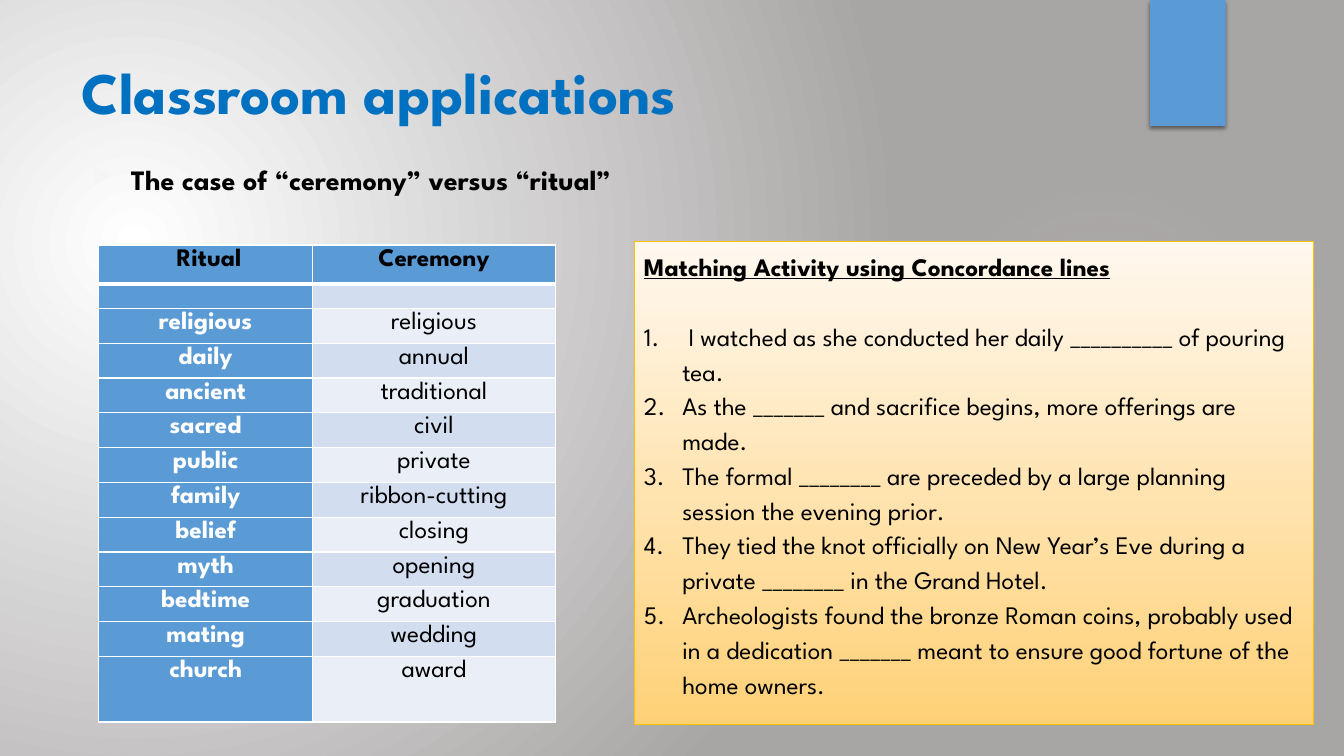
from lxml.etree import SubElement
from pptx import Presentation
from pptx.dml.color import RGBColor
from pptx.enum.shapes import MSO_SHAPE as Shape
from pptx.enum.text import MSO_ANCHOR as Anchor, PP_ALIGN as Align
from pptx.oxml import parse_xml
from pptx.oxml.ns import nsdecls, qn
from pptx.util import Inches, Pt

FONT = "League Spartan"
BLUE, TITLE_BLUE, BLACK, WHITE = "5B9BD5", "0070C0", "000000", "FFFFFF"
PALE, PALER = "D2DEEF", "EAEFF7"
COLUMNS, ROWS = 80, 45

COLLOCATES = [
    ("religious", "religious"), ("daily", "annual"), ("ancient", "traditional"),
    ("sacred", "civil"), ("public", "private"), ("family", "ribbon-cutting"),
    ("belief", "closing"), ("myth", "opening"), ("bedtime", "graduation"),
    ("mating", "wedding"), ("church", "award"),
]
SENTENCES = [
    " I watched as she conducted her daily __________ of pouring tea.",
    "As the _______ and sacrifice begins, more offerings are made.",
    "The formal ________ are preceded by a large planning session the evening prior.",
    "They tied the knot officially on New Year’s Eve during a private ________ in the Grand Hotel.",
    "Archeologists found the bronze Roman coins, probably used in a dedication _______ "
    "meant to ensure good fortune of the home owners.",
]


def color(hex_code):
    return RGBColor.from_string(hex_code)


def apply_gradient(properties, stops, direction):
    """Replace the solid fill in properties; stops are (position, colour, opacity) in percent."""
    stop_xml = "".join(
        f'<a:gs pos="{position * 1000}"><a:srgbClr val="{hex_code}">'
        f'<a:alpha val="{opacity * 1000}"/></a:srgbClr></a:gs>'
        for position, hex_code, opacity in stops)
    solid = properties.find(qn("a:solidFill"))
    properties.replace(solid, parse_xml(
        f'<a:gradFill {nsdecls("a")} rotWithShape="1"><a:gsLst>{stop_xml}</a:gsLst>'
        f'{direction}</a:gradFill>'))


def circle(left, top, right, bottom):
    """Direction of a radial gradient, with its focus insets in percent."""
    return (f'<a:path path="circle"><a:fillToRect l="{left * 1000}" t="{top * 1000}" '
            f'r="{right * 1000}" b="{bottom * 1000}"/></a:path>')


def add_bullet(paragraph, *elements):
    """Hang the first line and add bullet elements, each a (tag, attributes) pair."""
    properties = paragraph._p.get_or_add_pPr()
    properties.set("marL", str(Inches(0.38)))
    properties.set("indent", str(-Inches(0.38)))
    for tag, attributes in elements:
        SubElement(properties, qn(tag), attributes)
    return properties


class SlideBuilder:
    """Places styled elements on a slide by grid columns and rows."""

    def __init__(self, presentation):
        self.cell_width = presentation.slide_width / COLUMNS
        self.cell_height = presentation.slide_height / ROWS
        self.slide = presentation.slides.add_slide(presentation.slide_layouts[6])

    def place(self, column, row, columns, rows):
        return (round(column * self.cell_width), round(row * self.cell_height),
                round(columns * self.cell_width), round(rows * self.cell_height))

    def background(self, stops, direction):
        self.slide.background.fill.solid()
        apply_gradient(self.slide.background._cSld.bg.bgPr, stops, direction)

    def shape(self, kind, area, fill=BLUE, line=None):
        shape = self.slide.shapes.add_shape(kind, *self.place(*area))
        shape.shadow.inherit = False
        shape.fill.solid()
        shape.fill.fore_color.rgb = color(fill)
        if line:
            shape.line.color.rgb = color(line)
            shape.line.width = Pt(0.75)
        else:
            shape.line.fill.background()
        return shape

    def gradient_shape(self, kind, area, stops, direction, line=None):
        shape = self.shape(kind, area, line=line)
        apply_gradient(shape._element.spPr, stops, direction)
        return shape

    def text_box(self, area):
        frame = self.slide.shapes.add_textbox(*self.place(*area)).text_frame
        frame.word_wrap = True
        return frame

    def run(self, paragraph, text, size=18, fill=BLACK, bold=False, underline=False):
        run = paragraph.add_run()
        run.text = text
        font = run.font
        font.name, font.size, font.bold, font.underline = FONT, Pt(size), bold, underline
        font.color.rgb = color(fill)

    def table(self, area, widths, heights):
        table = self.slide.shapes.add_table(
            len(heights), len(widths), *self.place(*area)).table
        for column, width in zip(table.columns, widths):
            column.width = round(width * self.cell_width)
        for row, height in zip(table.rows, heights):
            row.height = round(height * self.cell_height)
        return table

    def cell(self, cell, text, fill, ink, bold, bottom_line=1):
        cell.margin_left = cell.margin_right = Inches(0.07)
        cell.margin_top = cell.margin_bottom = 0
        paragraph = cell.text_frame.paragraphs[0]
        paragraph.alignment = Align.CENTER
        paragraph.line_spacing = 1.15
        if text:
            self.run(paragraph, text, fill=ink, bold=bold)
        else:
            paragraph.font.size = Pt(10)
        properties = cell._tc.get_or_add_tcPr()
        for side, width in zip("LRTB", (1, 1, 1, bottom_line)):
            line = SubElement(properties, qn(f"a:ln{side}"), w=str(Pt(width)))
            SubElement(SubElement(line, qn("a:solidFill")), qn("a:srgbClr"), val=WHITE)
        cell.fill.solid()
        cell.fill.fore_color.rgb = color(fill)


def add_decoration(builder):
    builder.background([(0, WHITE, 100), (100, "A8A5A5", 100)], circle(45, 65, 125, 100))
    builder.gradient_shape(
        Shape.OVAL, (56.46, 10.98, 18.48, 18.48),
        [(0, "F1F0F0", 7), (36, "F1F0F0", 6), (69, "F1F0F0", 0)], circle(50, 50, 50, 50))
    tab = builder.shape(Shape.RECTANGLE, (68.46, 0, 4.5, 7.5))
    effects = tab._element.spPr.find(qn("a:effectLst"))
    shadow = SubElement(effects, qn("a:outerShdw"), blurRad=str(Pt(3)), dist=str(Pt(2)),
                        dir="5400000", algn="ctr", rotWithShape="0")
    SubElement(SubElement(shadow, qn("a:srgbClr"), val=BLACK), qn("a:alpha"), val="45000")


def add_headings(builder):
    title = builder.text_box((4.26, 3, 61.74, 9.18)).paragraphs[0]
    builder.run(title, "Classroom applications", 42, TITLE_BLUE, bold=True)
    subtitle = builder.text_box((4.92, 9.36, 58.68, 27.54)).paragraphs[0]
    properties = add_bullet(subtitle, ("a:buClr", {}), ("a:buSzPct", {"val": "80000"}),
                            ("a:buChar", {"char": "▶"}))
    SubElement(properties.find(qn("a:buClr")), qn("a:srgbClr"), val="F5F5F5")
    builder.run(subtitle, "The case of “ceremony” versus “ritual”", 20, bold=True)


def add_collocate_table(builder):
    heights = [2.34, 1.44] + [1.87] * (len(COLLOCATES) - 1) + [3.9]
    table = builder.table((5.88, 14.58, 27.18, sum(heights)), (12.72, 14.46), heights)
    for column, heading in enumerate((" Ritual", "Ceremony")):
        builder.cell(table.cell(0, column), heading, BLUE, BLACK, True, bottom_line=3)
    for row, (ritual, ceremony) in enumerate([("", "")] + COLLOCATES, start=1):
        builder.cell(table.cell(row, 0), ritual, BLUE, WHITE, True)
        builder.cell(table.cell(row, 1), ceremony, PALE if row % 2 else PALER, BLACK, False)


def add_activity(builder):
    panel = builder.gradient_shape(
        Shape.RECTANGLE, (37.74, 14.4, 40.44, 28.74),
        [(0, "FFF8EF", 100), (100, "FFD177", 100)],
        '<a:lin ang="5400000" scaled="0"/>', line="FFC000")
    frame = panel.text_frame
    frame.word_wrap = True
    frame.vertical_anchor = Anchor.TOP
    heading = frame.paragraphs[0]
    builder.run(heading, "Matching Activity using Concordance lines", bold=True, underline=True)
    for number, sentence in enumerate(SENTENCES):
        paragraph = frame.add_paragraph()
        add_bullet(paragraph, ("a:buFont", {"typeface": "+mj-lt"}),
                   ("a:buAutoNum", {"type": "arabicPeriod"}))
        paragraph.space_before = Pt(0 if number else 25)
        builder.run(paragraph, sentence)
    for paragraph in frame.paragraphs:
        paragraph.alignment = Align.LEFT
        paragraph.line_spacing = 1.15


def main():
    presentation = Presentation()
    presentation.slide_width, presentation.slide_height = Inches(13.33), Inches(7.5)
    builder = SlideBuilder(presentation)
    add_decoration(builder)
    add_headings(builder)
    add_collocate_table(builder)
    add_activity(builder)
    presentation.save("out.pptx")


if __name__ == "__main__":
    main()
